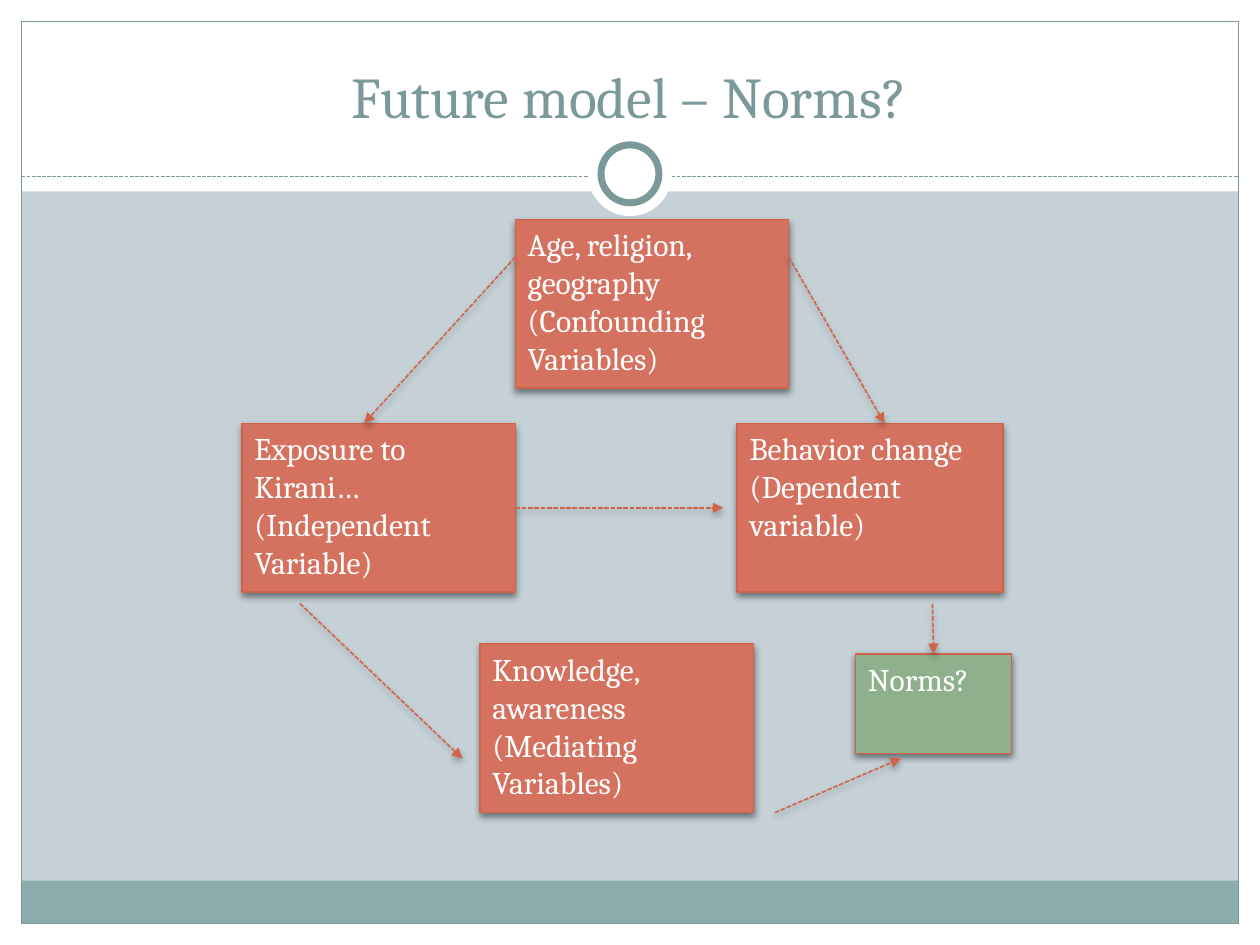
from lxml.etree import SubElement
from pptx import Presentation
from pptx.dml.color import RGBColor
from pptx.enum.dml import MSO_LINE
from pptx.enum.shapes import MSO_CONNECTOR, MSO_SHAPE
from pptx.enum.text import MSO_ANCHOR, PP_ALIGN
from pptx.oxml.ns import qn
from pptx.util import Inches, Pt

FONT = "Cambria"
WHITE, SLATE, TEAL, PALE = "FFFFFF", "7C999A", "8CADAE", "C5D1D7"
CORAL, RUST, GREEN = "D4725F", "D16349", "8FB08C"

TITLE = "Future model – Norms?"
FRAME = [
    ((0, 7.33, 10, 0.17), WHITE),
    ((0, 0, 10, 1.52), WHITE),
    ((0, 0, 0.17, 7.5), WHITE),
    ((9.83, 0, 0.17, 7.5), WHITE),
    ((0.17, 6.99, 9.66, 0.34), TEAL),
]
BOXES = {
    "exposure": ((1.92, 3.36, 2.17, 1.34), CORAL,
                 ["Exposure to Kirani…", "(Independent Variable)"]),
    "behavior": ((5.85, 3.36, 2.11, 1.34), CORAL,
                 ["Behavior change (Dependent variable)"]),
    "mediators": ((3.81, 5.11, 2.17, 1.34), CORAL,
                  ["Knowledge, awareness", "(Mediating Variables)"]),
    "confounders": ((4.09, 1.74, 2.17, 1.34), CORAL,
                    ["Age, religion, geography", "(Confounding Variables)"]),
    "norms": ((6.79, 5.19, 1.24, 0.79), GREEN, ["Norms?"]),
}
ARROWS = [
    ((4.09, 4.03), (5.74, 4.03), ("exposure", 3), None),
    ((2.38, 4.79), (3.67, 6.02), None, None),
    ((6.15, 6.45), (7.15, 6.02), None, None),
    ((4.09, 2.04), (2.89, 3.36), None, None),
    ((6.26, 2.04), (7.02, 3.36), None, None),
    ((7.4, 4.79), (7.41, 5.19), None, ("norms", 0)),
]


def color(value):
    return RGBColor.from_string(value)


def set_shadow(s, alpha):
    sp_pr = s._element.spPr
    for old in sp_pr.findall(qn("a:effectLst")):
        sp_pr.remove(old)
    effects = SubElement(sp_pr, qn("a:effectLst"))
    if alpha:
        shadow = SubElement(effects, qn("a:outerShdw"), blurRad=str(Pt(4)),
                            dist=str(Pt(2)), dir="5400000", rotWithShape="0")
        black = SubElement(shadow, qn("a:srgbClr"), val="000000")
        SubElement(black, qn("a:alpha"), val=str(alpha * 1000))


def add_shape(slide, at, fill=None, line=None, width=0.75,
              kind=MSO_SHAPE.RECTANGLE, shadow=0):
    s = slide.shapes.add_shape(kind, *map(Inches, at))
    if fill:
        s.fill.solid()
        s.fill.fore_color.rgb = color(fill)
    else:
        s.fill.background()
    if line:
        s.line.color.rgb = color(line)
        s.line.width = Pt(width)
    else:
        s.line.fill.background()
    set_shadow(s, shadow)
    return s


def add_line(slide, start, end, line, width, shadow=0):
    s = slide.shapes.add_connector(MSO_CONNECTOR.STRAIGHT,
                                   *map(Inches, start + end))
    s.line.color.rgb = color(line)
    s.line.width = Pt(width)
    s.line.dash_style = MSO_LINE.SQUARE_DOT
    set_shadow(s, shadow)
    return s


def write(s, lines, size, ink, align, anchor):
    tf = s.text_frame
    tf.word_wrap = True
    tf.vertical_anchor = anchor
    for i, text in enumerate(lines):
        p = tf.add_paragraph() if i else tf.paragraphs[0]
        p.alignment = align
        r = p.add_run()
        r.text = text
        r.font.name = FONT
        r.font.size = Pt(size)
        r.font.color.rgb = color(ink)


def add_ring(slide, diameter, **style):
    at = (5 - diameter / 2, 1.38 - diameter / 2, diameter, diameter)
    add_shape(slide, at, WHITE, kind=MSO_SHAPE.OVAL, **style)


def main():
    prs = Presentation()
    prs.slide_width, prs.slide_height = Inches(10), Inches(7.5)
    slide = prs.slides.add_slide(prs.slide_layouts[6])
    slide.background.fill.solid()
    slide.background.fill.fore_color.rgb = color(PALE)

    for at, fill in FRAME:
        add_shape(slide, at, fill)
    add_shape(slide, (0.17, 0.17, 9.66, 7.16), line=SLATE)
    add_line(slide, (0.17, 1.4), (9.83, 1.4), SLATE, 0.75)
    add_ring(slide, 0.67)
    add_ring(slide, 0.46, line=SLATE, width=4)

    title = slide.shapes.add_textbox(*map(Inches, (0.33, 0.25, 9.33, 0.83)))
    write(title, [TITLE], 33, SLATE, PP_ALIGN.CENTER, MSO_ANCHOR.BOTTOM)

    boxes = {}
    for name, (at, fill, lines) in BOXES.items():
        boxes[name] = add_shape(slide, at, fill, RUST, shadow=45)
        write(boxes[name], lines, 18, WHITE, PP_ALIGN.LEFT, MSO_ANCHOR.TOP)

    for start, end, source, target in ARROWS:
        s = add_line(slide, start, end, RUST, 0.9, shadow=35)
        SubElement(s.line._get_or_add_ln(), qn("a:tailEnd"), type="triangle")
        if source:
            s.begin_connect(boxes[source[0]], source[1])
        if target:
            s.end_connect(boxes[target[0]], target[1])

    prs.save("out.pptx")


if __name__ == "__main__":
    main()
